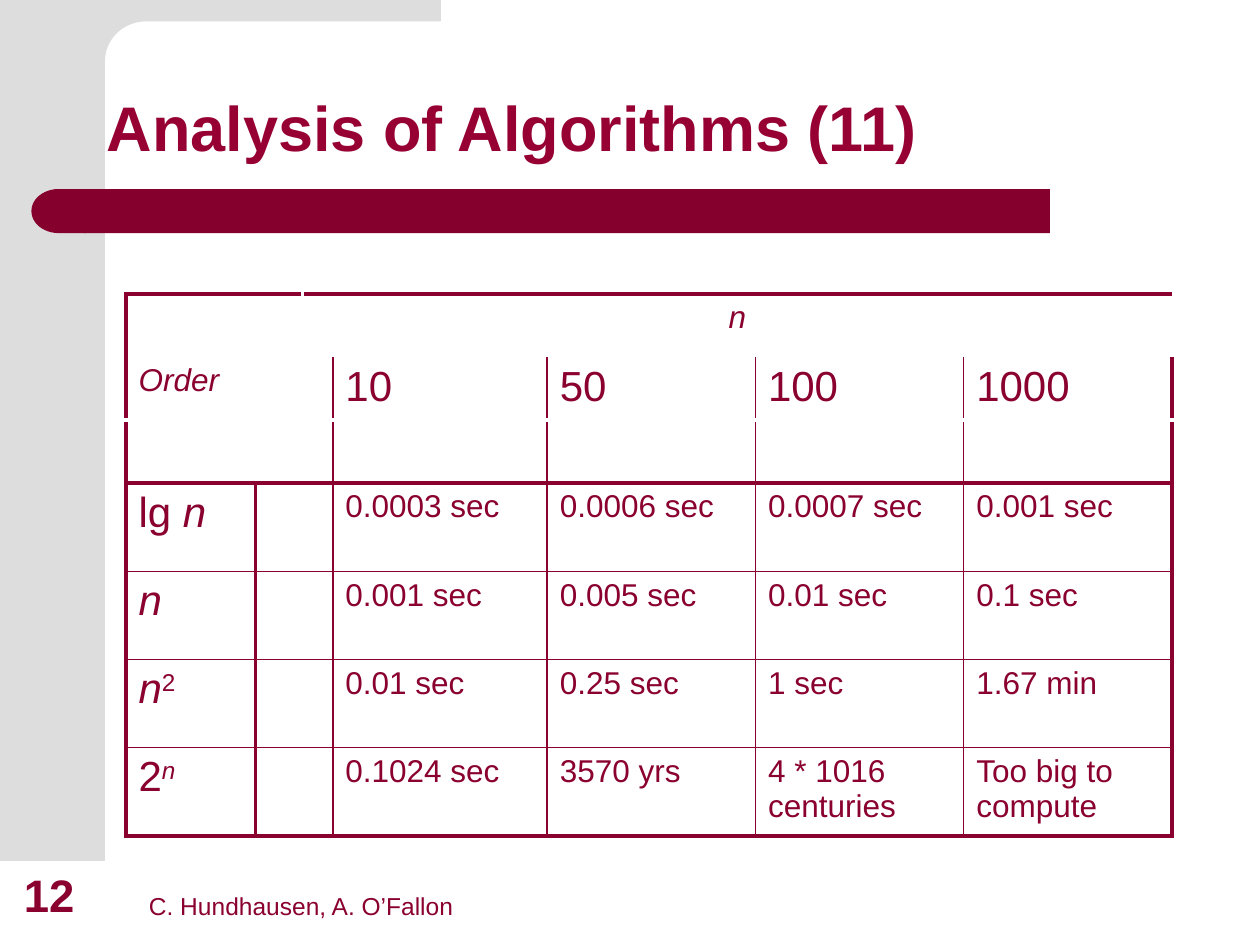
import math
from lxml import etree
from pptx import Presentation
from pptx.dml.color import RGBColor
from pptx.enum import shapes, text
from pptx.oxml import ns
from pptx.util import Pt

MAROON = RGBColor(0x8A, 0x00, 0x2E)
TITLE_RED = RGBColor(0x96, 0x00, 0x32)
BAR_RED = RGBColor(0x86, 0x00, 0x2D)
GREY = RGBColor(0xDD, 0xDD, 0xDD)
WHITE = RGBColor(0xFF, 0xFF, 0xFF)


def add_text(paragraph, words, size=18, color=MAROON, bold=False, italic=False, raised=False):
    run = paragraph.add_run()
    run.text = words
    run.font.name = "Arial"
    run.font.size = Pt(size)
    run.font.bold = bold
    run.font.italic = italic
    run.font.color.rgb = color
    if raised:
        run.font._element.set("baseline", "30000")


def add_border(cell, side, line):
    width, color = line or (0, None)
    edge = etree.SubElement(cell._tc.get_or_add_tcPr(), ns.qn(f"a:ln{side}"), w=str(Pt(width)))
    if color is None:
        etree.SubElement(edge, ns.qn("a:noFill"))
    else:
        fill = etree.SubElement(edge, ns.qn("a:solidFill"))
        etree.SubElement(fill, ns.qn("a:srgbClr"), val=str(color))


prs = Presentation()
prs.slide_width, prs.slide_height = Pt(720), Pt(540)
slide = prs.slides.add_slide(prs.slide_layouts[6])

side_band = slide.shapes.add_shape(shapes.MSO_SHAPE.RECTANGLE, Pt(0), Pt(-48), Pt(60), Pt(540))

arc = [
    (83.5 - 23.5 * math.sin(math.radians(a)), 35 - 22.8 * math.cos(math.radians(a)))
    for a in range(0, 91, 5)
]
outline = [(252, 12.2)] + arc + [(60, 44), (36, 44), (36, -48)]
builder = slide.shapes.build_freeform(Pt(252), Pt(-48), scale=1.0)
builder.add_line_segments([(Pt(x), Pt(y)) for x, y in outline], close=True)
corner = builder.convert_to_shape()

bar = slide.shapes.add_shape(shapes.MSO_SHAPE.ROUNDED_RECTANGLE, Pt(48), Pt(108), Pt(552), Pt(25.2))
bar.adjustments[0] = 0
bar_end = slide.shapes.add_shape(shapes.MSO_SHAPE.FLOWCHART_DELAY, Pt(18), Pt(108), Pt(31), Pt(25.2))
bar_end._element.spPr.get_or_add_xfrm().set("flipH", "1")

for part, color in [(side_band, GREY), (corner, GREY), (bar, BAR_RED), (bar_end, BAR_RED)]:
    part.shadow.inherit = False
    part.fill.solid()
    part.fill.fore_color.rgb = color
    part.line.fill.background()

BOTTOM, MIDDLE = text.MSO_ANCHOR.BOTTOM, text.MSO_ANCHOR.MIDDLE
captions = [
    ("C. Hundhausen, A. O’Fallon", (78, 492, 270, 37.5), BOTTOM, dict(size=14)),
    ("12", (6.5, 492, 46, 38), BOTTOM, dict(size=26, bold=True)),
    ("Analysis of Algorithms (11)", (54, 42, 624, 66), MIDDLE,
     dict(size=36, color=TITLE_RED, bold=True)),
]
for words, place, anchor, style in captions:
    frame = slide.shapes.add_textbox(*map(Pt, place)).text_frame
    frame.word_wrap = True
    frame.vertical_anchor = anchor
    add_text(frame.paragraphs[0], words, **style)
frame.paragraphs[0].line_spacing = 0.9

widths = [74, 27, 17, 122.5, 119, 119, 119]
heights = [36] * 3 + [50.4] * 4
table = slide.shapes.add_table(
    7, 7, Pt(72), Pt(168), Pt(sum(widths)), Pt(sum(heights))
).table
table.first_row = table.horz_banding = False
for column, width in zip(table.columns, widths):
    column.width = Pt(width)
for row, height in zip(table.rows, heights):
    row.height = Pt(height)

THICK, THIN, GAP = (2.25, MAROON), (1, MAROON), (2.25, WHITE)
level_lines = [THICK, None, GAP, THICK, THIN, THIN, THIN, THICK]
for r in range(7):
    inner = THIN if r > 0 else None
    upright_lines = [THICK, THICK if r > 2 else None, GAP] + [inner] * 4 + [THICK]
    for c in range(7):
        cell = table.cell(r, c)
        add_border(cell, "L", upright_lines[c])
        add_border(cell, "R", upright_lines[c + 1])
        add_border(cell, "T", level_lines[r])
        add_border(cell, "B", level_lines[r + 1])
        cell.fill.background()

for r in range(3):
    table.cell(r, 0).merge(table.cell(r, 1))
table.cell(0, 2).merge(table.cell(0, 6))

n_heading = table.cell(0, 2).text_frame.paragraphs[0]
n_heading.alignment = text.PP_ALIGN.CENTER
add_text(n_heading, "n", italic=True)
add_text(table.cell(1, 0).text_frame.paragraphs[0], "Order", italic=True)
for c, size_of_n in enumerate(["10", "50", "100", "1000"], 3):
    add_text(table.cell(1, c).text_frame.paragraphs[0], size_of_n, size=24)

orders = [
    ([("lg ", {}), ("n", dict(italic=True))],
     ["0.0003 sec", "0.0006 sec", "0.0007 sec", "0.001 sec"]),
    ([("n", dict(italic=True))],
     ["0.001 sec", "0.005 sec", "0.01 sec", "0.1 sec"]),
    ([("n", dict(italic=True)), ("2", dict(raised=True))],
     ["0.01 sec", "0.25 sec", "1 sec", "1.67 min"]),
    ([("2", {}), ("n", dict(italic=True, raised=True))],
     ["0.1024 sec", "3570 yrs", "4 * 1016 centuries", "Too big to compute"]),
]
for r, (order, times) in enumerate(orders, 3):
    for words, style in order:
        add_text(table.cell(r, 0).text_frame.paragraphs[0], words, size=24, **style)
    for c, time in enumerate(times, 3):
        add_text(table.cell(r, c).text_frame.paragraphs[0], time)

prs.save("out.pptx")
